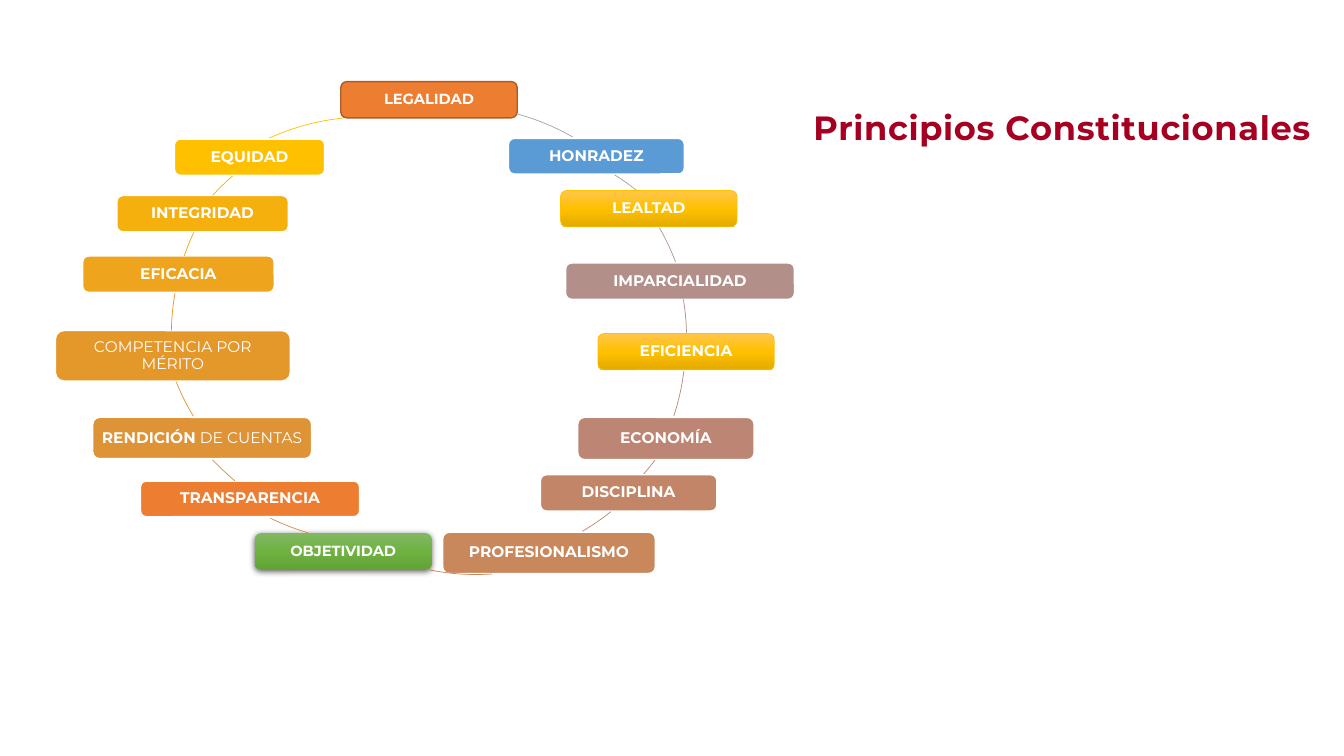
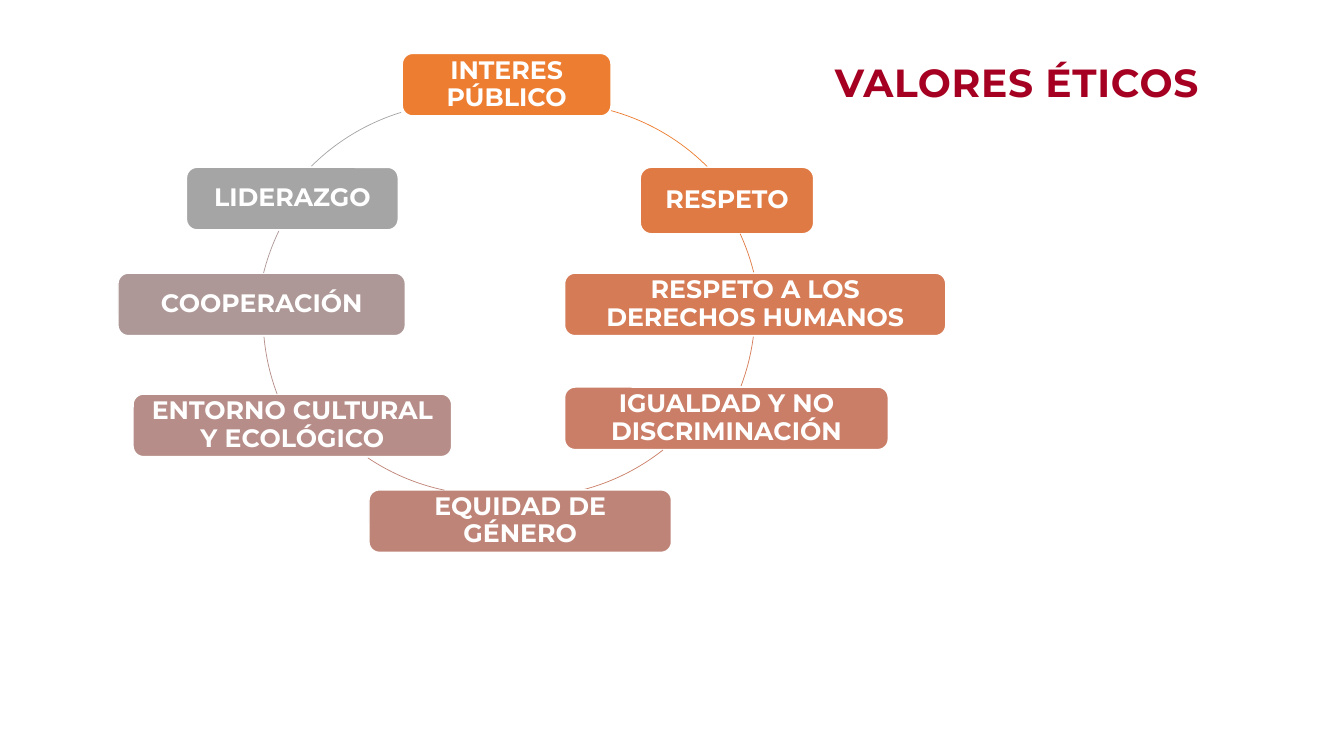
from copy import deepcopy
from dataclasses import dataclass
from math import atan2, degrees
from typing import NamedTuple

from lxml.etree import SubElement
from pptx import Presentation
from pptx.dml.color import RGBColor
from pptx.enum.shapes import MSO_SHAPE
from pptx.enum.text import MSO_ANCHOR, PP_ALIGN
from pptx.oxml.ns import qn
from pptx.shapes.autoshape import Shape
from pptx.slide import Slide
from pptx.util import Inches, Length, Pt

COLUMNS, ROWS = 13.33, 7.5  # the slide is a grid of one-inch cells
FONT = "Montserrat"

WHITE = RGBColor(0xFF, 0xFF, 0xFF)
CRIMSON = RGBColor(0xA5, 0x00, 0x21)
ORANGE = RGBColor(0xED, 0x7D, 0x31)
RUST = RGBColor(0xAF, 0x5C, 0x24)
BLUE = RGBColor(0x5B, 0x9B, 0xD5)
GRAY = RGBColor(0xA5, 0xA5, 0xA5)
YELLOW = RGBColor(0xFF, 0xC0, 0x00)

# Steps from gray to yellow around the ring of principles
ASH = RGBColor(0xA9, 0x9F, 0x9C)
STONE = RGBColor(0xAD, 0x97, 0x92)
MAUVE = RGBColor(0xB2, 0x8F, 0x88)
ROSE = RGBColor(0xB7, 0x8A, 0x7E)
CLAY = RGBColor(0xBD, 0x85, 0x73)
TERRACOTTA = RGBColor(0xC2, 0x85, 0x67)
COPPER = RGBColor(0xC9, 0x87, 0x5C)
BRONZE = RGBColor(0xCF, 0x8B, 0x50)
CARAMEL = RGBColor(0xD6, 0x8F, 0x44)
HONEY = RGBColor(0xDE, 0x93, 0x37)
OCHRE = RGBColor(0xE5, 0x98, 0x2A)
AMBER = RGBColor(0xEE, 0xA4, 0x1C)
SAFFRON = RGBColor(0xF6, 0xB0, 0x0E)

# Steps from orange to gray around the ring of values
PUMPKIN = RGBColor(0xE0, 0x7A, 0x44)
CORAL = RGBColor(0xD5, 0x7B, 0x56)
SALMON = RGBColor(0xCA, 0x7E, 0x67)
BRICK = RGBColor(0xBF, 0x84, 0x78)
DUSK = RGBColor(0xB6, 0x8D, 0x88)
SMOKE = RGBColor(0xAD, 0x98, 0x97)


class Gradient(NamedTuple):
    top: RGBColor
    middle: RGBColor
    bottom: RGBColor


class Outline(NamedTuple):
    color: RGBColor
    width: float


class Box(NamedTuple):
    left: float
    top: float
    width: float = 1.75
    height: float = 0.36

    def lengths(self) -> list[Length]:
        return [Inches(cells) for cells in self]


class Arc(NamedTuple):
    """A clockwise part of the circle whose square starts at left, top."""
    left: float
    top: float
    start: tuple[float, float]
    end: tuple[float, float]


@dataclass(frozen=True)
class Node:
    label: str
    box: Box
    fill: RGBColor | Gradient
    arc: Arc
    arc_color: RGBColor | None = None  # the fill when not given
    plain: str = ""
    outline: Outline | None = Outline(WHITE, 1)
    size: float | None = None  # the ring's size when not given
    shadow: bool = False


@dataclass(frozen=True)
class Ring:
    title: str
    title_box: Box
    title_size: float
    diameter: float
    text_size: float
    margin: float
    nodes: tuple[Node, ...]


GOLD = Gradient(RGBColor(0xFF, 0xC6, 0x4B), YELLOW, RGBColor(0xE3, 0xAB, 0x00))
GREEN = Gradient(RGBColor(0x81, 0xB8, 0x61), RGBColor(0x6F, 0xB2, 0x42),
                 RGBColor(0x62, 0xA3, 0x36))
GOLD_OUTLINE = Outline(YELLOW, 0.5)
THICK_OUTLINE = Outline(WHITE, 1.5)

PRINCIPLES = Ring(
    "Principios Constitucionales", Box(7.75, 1.01, 5.57, 0.5), 24,
    diameter=4.66, text_size=11, margin=0.05,
    nodes=(
        Node("LEGALIDAD", Box(3.38, 0.81), ORANGE,
             Arc(2.19, 1.05, (5.13, 1.14), (5.68, 1.36)), GRAY,
             outline=Outline(RUST, 1), size=10.5),
        Node("HONRADEZ", Box(5.04, 1.37), BLUE,
             Arc(2.53, 1.38, (6.1, 1.73), (6.32, 1.89)), ASH, outline=THICK_OUTLINE),
        Node("LEALTAD", Box(5.56, 1.89), GOLD,
             Arc(2.19, 1.09, (6.54, 2.26), (6.7, 2.6)), STONE, outline=GOLD_OUTLINE),
        Node("IMPARCIALIDAD", Box(5.61, 2.61, 2.27), MAUVE,
             Arc(2.15, 1.02, (6.78, 2.97), (6.81, 3.3))),
        Node("EFICIENCIA", Box(5.93, 3.31), GOLD,
             Arc(2.14, 1.07, (6.79, 3.68), (6.69, 4.13)), ROSE, outline=GOLD_OUTLINE),
        Node("ECONOMÍA", Box(5.73, 4.14, height=0.42), CLAY,
             Arc(2.3, 0.84, (6.49, 4.56), (6.37, 4.71))),
        Node("DISCIPLINA", Box(5.36, 4.71), TERRACOTTA,
             Arc(2.27, 0.93, (6.06, 5.08), (5.78, 5.28))),
        Node("PROFESIONALISMO", Box(4.39, 5.28, 2.11, 0.41), COPPER,
             Arc(2.39, 1.04, (4.88, 5.7), (4.26, 5.66))),
        Node("OBJETIVIDAD", Box(2.53, 5.29), GREEN,
             Arc(1.38, 0.72, (3.06, 5.29), (2.66, 5.14)), BRONZE,
             outline=None, size=10.5, shadow=True),
        Node("TRANSPARENCIA", Box(1.39, 4.77, 2.18), ORANGE,
             Arc(1.48, 0.64, (2.33, 4.77), (2.11, 4.56)), CARAMEL,
             outline=THICK_OUTLINE),
        Node("RENDICIÓN", Box(0.92, 4.14, 2.17, 0.41), HONEY,
             Arc(1.58, 0.59, (1.92, 4.13), (1.74, 3.78)), plain=" DE CUENTAS"),
        Node("", Box(0.55, 3.28, 2.33, 0.5), OCHRE,
             Arc(1.7, 0.99, (1.7, 3.28), (1.74, 2.91)), plain="COMPETENCIA POR MÉRITO"),
        Node("EFICACIA", Box(0.82, 2.54, 1.9), AMBER,
             Arc(1.7, 0.97, (1.82, 2.54), (1.92, 2.3))),
        Node("INTEGRIDAD", Box(1.16, 1.94, 1.7), SAFFRON,
             Arc(1.5, 1.18, (2.11, 1.94), (2.31, 1.74))),
        Node("EQUIDAD", Box(1.73, 1.38, 1.49), YELLOW,
             Arc(1.31, 1.16, (2.67, 1.37), (3.4, 1.17))),
    ),
)

VALUES = Ring(
    "VALORES ÉTICOS", Box(8.14, 0.53, 3.89, 0.57), 28,
    diameter=4.33, text_size=18, margin=0.07,
    nodes=(
        Node("INTERES PÚBLICO", Box(3.99, 0.53, 2.07, 0.62), ORANGE,
             Arc(3.32, 1.02, (6.06, 1.1), (7.02, 1.65))),
        Node("RESPETO", Box(6.35, 1.66, 1.72, 0.66), PUMPKIN,
             Arc(3.21, 1.06, (7.34, 2.32), (7.48, 2.71))),
        Node("RESPETO A LOS DERECHOS HUMANOS", Box(5.6, 2.71, 3.78, 0.62), CORAL,
             Arc(3.16, 0.9, (7.47, 3.34), (7.35, 3.83))),
        Node("IGUALDAD Y NO DISCRIMINACIÓN", Box(5.6, 3.84, 3.21, 0.62), SALMON,
             Arc(3.07, 0.6, (6.58, 4.47), (5.79, 4.86))),
        Node("EQUIDAD DE GÉNERO", Box(3.66, 4.86, 3, 0.62), BRICK,
             Arc(2.69, 0.58, (4.41, 4.86), (3.65, 4.54))),
        Node("ENTORNO CULTURAL Y ECOLÓGICO", Box(1.32, 3.91, 3.16, 0.62), DUSK,
             Arc(2.61, 0.98, (2.75, 3.91), (2.62, 3.34))),
        Node("COOPERACIÓN", Box(1.17, 2.71, 2.85, 0.62), SMOKE,
             Arc(2.55, 1.07, (2.62, 2.71), (2.77, 2.29))),
        Node("LIDERAZGO", Box(1.85, 1.66, 2.1, 0.62), GRAY,
             Arc(2.45, 1.02, (3.09, 1.65), (3.98, 1.12))),
    ),
)


def write_text(shape: Shape, *runs: tuple[str, bool], size: float, color: RGBColor,
               line_spacing: float = 1.0, letter_spacing: float = 0) -> None:
    """Write one centred paragraph from (text, bold) runs."""
    shape.text_frame.word_wrap = True
    paragraph = shape.text_frame.paragraphs[0]
    paragraph.alignment = PP_ALIGN.CENTER
    paragraph.line_spacing = line_spacing
    for text, bold in runs:
        if not text:
            continue
        run = paragraph.add_run()
        run.text = text
        run.font.name, run.font.size, run.font.bold = FONT, Pt(size), bold
        run.font.color.rgb = color
        if letter_spacing:
            run.font._element.set("spc", str(round(letter_spacing * 100)))


def set_fill(shape: Shape, fill: RGBColor | Gradient) -> None:
    if isinstance(fill, RGBColor):
        shape.fill.solid()
        shape.fill.fore_color.rgb = fill
        return
    shape.fill.gradient()
    shape.fill.gradient_angle = 270
    stop_list = shape._element.spPr.find(".//" + qn("a:gsLst"))
    stop_list.append(deepcopy(stop_list[-1]))
    for index, (stop, color) in enumerate(zip(shape.fill.gradient_stops, fill)):
        stop.position = index / 2
        stop.color.rgb = color


def set_outline(shape: Shape, outline: Outline | None) -> None:
    if outline is None:
        shape.line.fill.background()
    else:
        shape.line.color.rgb = outline.color
        shape.line.width = Pt(outline.width)


def add_shadow(shape: Shape) -> None:
    effects = shape._element.spPr.find(qn("a:effectLst"))
    shadow = SubElement(effects, qn("a:outerShdw"), blurRad=str(Pt(4.5)),
                        dist=str(Pt(1.5)), dir="5400000", rotWithShape="0")
    color = SubElement(shadow, qn("a:srgbClr"), val="000000")
    SubElement(color, qn("a:alpha"), val="63000")


def draw_node(slide: Slide, node: Node, ring: Ring) -> None:
    shape = slide.shapes.add_shape(MSO_SHAPE.ROUNDED_RECTANGLE, *node.box.lengths())
    set_fill(shape, node.fill)
    set_outline(shape, node.outline)
    shape.shadow.inherit = False
    if node.shadow:
        add_shadow(shape)
    frame = shape.text_frame
    frame.vertical_anchor = MSO_ANCHOR.MIDDLE
    frame.margin_left = frame.margin_right = Inches(ring.margin)
    frame.margin_top = frame.margin_bottom = Inches(ring.margin)
    write_text(shape, (node.label, True), (node.plain, False),
               size=node.size or ring.text_size, color=WHITE, line_spacing=0.9)


def draw_arc(slide: Slide, arc: Arc, diameter: float, color: RGBColor) -> None:
    square = Box(arc.left, arc.top, diameter, diameter)
    shape = slide.shapes.add_shape(MSO_SHAPE.ARC, *square.lengths())
    center_x, center_y = arc.left + diameter / 2, arc.top + diameter / 2
    for index, (x, y) in enumerate((arc.start, arc.end)):
        angle = degrees(atan2(y - center_y, x - center_x)) % 360
        shape.adjustments[index] = angle * 0.6  # 60000 units a degree, over 100000
    shape.fill.background()
    set_outline(shape, Outline(color, 0.5))
    shape.shadow.inherit = False


def draw_ring(slide: Slide, ring: Ring) -> None:
    title = slide.shapes.add_textbox(*ring.title_box.lengths())
    write_text(title, (ring.title, True), size=ring.title_size, color=CRIMSON,
               letter_spacing=0.5)
    for node in ring.nodes:
        draw_node(slide, node, ring)
        draw_arc(slide, node.arc, ring.diameter, node.arc_color or node.fill)


def main() -> None:
    presentation = Presentation()
    presentation.slide_width, presentation.slide_height = Inches(COLUMNS), Inches(ROWS)
    blank_layout = presentation.slide_layouts[6]
    for ring in (PRINCIPLES, VALUES):
        draw_ring(presentation.slides.add_slide(blank_layout), ring)
    presentation.save("out.pptx")


if __name__ == "__main__":
    main()
